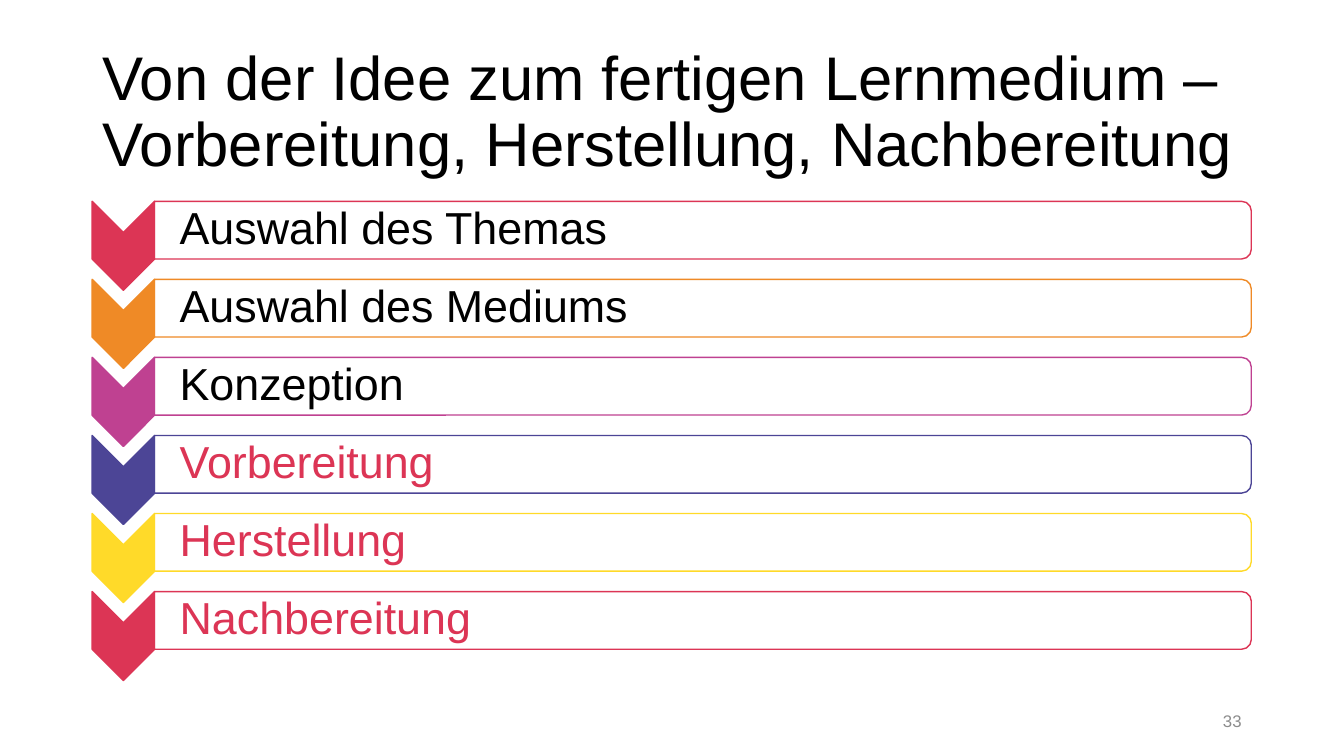
from dataclasses import dataclass

from lxml.etree import SubElement
from pptx import Presentation
from pptx.dml.color import RGBColor
from pptx.enum.shapes import MSO_SHAPE
from pptx.enum.text import MSO_ANCHOR, PP_ALIGN
from pptx.oxml.ns import qn
from pptx.shapes.autoshape import Shape
from pptx.slide import Slide
from pptx.util import Pt

BLACK = RGBColor(0x00, 0x00, 0x00)
WHITE = RGBColor(0xFF, 0xFF, 0xFF)
GREY = RGBColor(0x8C, 0x8C, 0x8C)
RED = RGBColor(0xDC, 0x35, 0x55)
ORANGE = RGBColor(0xEF, 0x8A, 0x26)
MAGENTA = RGBColor(0xBF, 0x41, 0x91)
VIOLET = RGBColor(0x4C, 0x45, 0x96)
YELLOW = RGBColor(0xFF, 0xDA, 0x29)

FIRST_STEP_TOP = 143.8
STEP_PITCH = 55.75
BAR_OPACITY = "90000"


@dataclass(frozen=True)
class Box:
    """Visible area in points."""
    left: float
    top: float
    width: float
    height: float


@dataclass(frozen=True)
class Step:
    label: str
    accent: RGBColor
    label_color: RGBColor = BLACK


STEPS = (
    Step("Auswahl des Themas", RED),
    Step("Auswahl des Mediums", ORANGE),
    Step("Konzeption", MAGENTA),
    Step("Vorbereitung", VIOLET, RED),
    Step("Herstellung", YELLOW, RED),
    Step("Nachbereitung", RED, RED),
)

LABEL_FRAME = {
    "margin_left": Pt(17.9),
    "margin_top": Pt(1.5),
    "margin_right": Pt(1.5),
    "margin_bottom": Pt(1.5),
}


def add_text(slide: Slide, box: Box, text: str, size: float, color: RGBColor,
             frame_format: dict | None = None,
             paragraph_format: dict | None = None) -> None:
    field = slide.shapes.add_textbox(
        Pt(box.left), Pt(box.top), Pt(box.width), Pt(box.height))
    frame = field.text_frame
    paragraph = frame.paragraphs[0]
    paragraph.text = text
    font = paragraph.runs[0].font
    font.color.rgb = color
    formats = (
        (frame, {"word_wrap": True, "vertical_anchor": MSO_ANCHOR.MIDDLE,
                 **(frame_format or {})}),
        (paragraph, paragraph_format or {}),
        (font, {"name": "Arial", "size": Pt(size)}),
    )
    for target, values in formats:
        for attribute, value in values.items():
            setattr(target, attribute, value)


def add_turned_shape(slide: Slide, kind: MSO_SHAPE, box: Box,
                     fill: RGBColor, line: RGBColor) -> Shape:
    """Add a shape turned by 90 degrees that covers the visible box."""
    offset = (box.width - box.height) / 2
    shape = slide.shapes.add_shape(
        kind, Pt(box.left + offset), Pt(box.top - offset),
        Pt(box.height), Pt(box.width))
    shape.rotation = 90
    shape.shadow.inherit = False
    shape.fill.solid()
    shape.fill.fore_color.rgb = fill
    shape.line.color.rgb = line
    shape.line.width = Pt(1)
    return shape


def add_step(slide: Slide, step: Step, top: float) -> None:
    # Arrow pointing down to the next step
    add_turned_shape(slide, MSO_SHAPE.CHEVRON, Box(65.8, top, 44.6, 63.6),
                     step.accent, step.accent)
    # Bar with rounded right corners
    bar = add_turned_shape(slide, MSO_SHAPE.ROUND_2_SAME_RECTANGLE,
                           Box(110.4, top, 783.4, 41.2), WHITE, step.accent)
    bar_color = bar.fill._xPr.find(f"{qn('a:solidFill')}/{qn('a:srgbClr')}")
    SubElement(bar_color, qn("a:alpha"), val=BAR_OPACITY)
    # Label
    add_text(slide, Box(110.4, top + 2, 781.2, 37.2), step.label, 32,
             step.label_color, LABEL_FRAME, {"line_spacing": 0.9})


def main() -> None:
    presentation = Presentation()
    presentation.slide_width = Pt(960)
    presentation.slide_height = Pt(540)
    slide = presentation.slides.add_slide(presentation.slide_layouts[6])

    # Title
    add_text(slide, Box(66, 28.75, 828, 104.4),
             "Von der Idee zum fertigen Lernmedium – "
             "Vorbereitung, Herstellung, Nachbereitung",
             44, BLACK, paragraph_format={"line_spacing": 0.9})

    # Steps
    for index, step in enumerate(STEPS):
        add_step(slide, step, FIRST_STEP_TOP + index * STEP_PITCH)

    # Slide number
    add_text(slide, Box(678, 500.5, 216, 28.75), "33", 12, GREY,
             paragraph_format={"alignment": PP_ALIGN.RIGHT})

    presentation.save("out.pptx")


if __name__ == "__main__":
    main()
